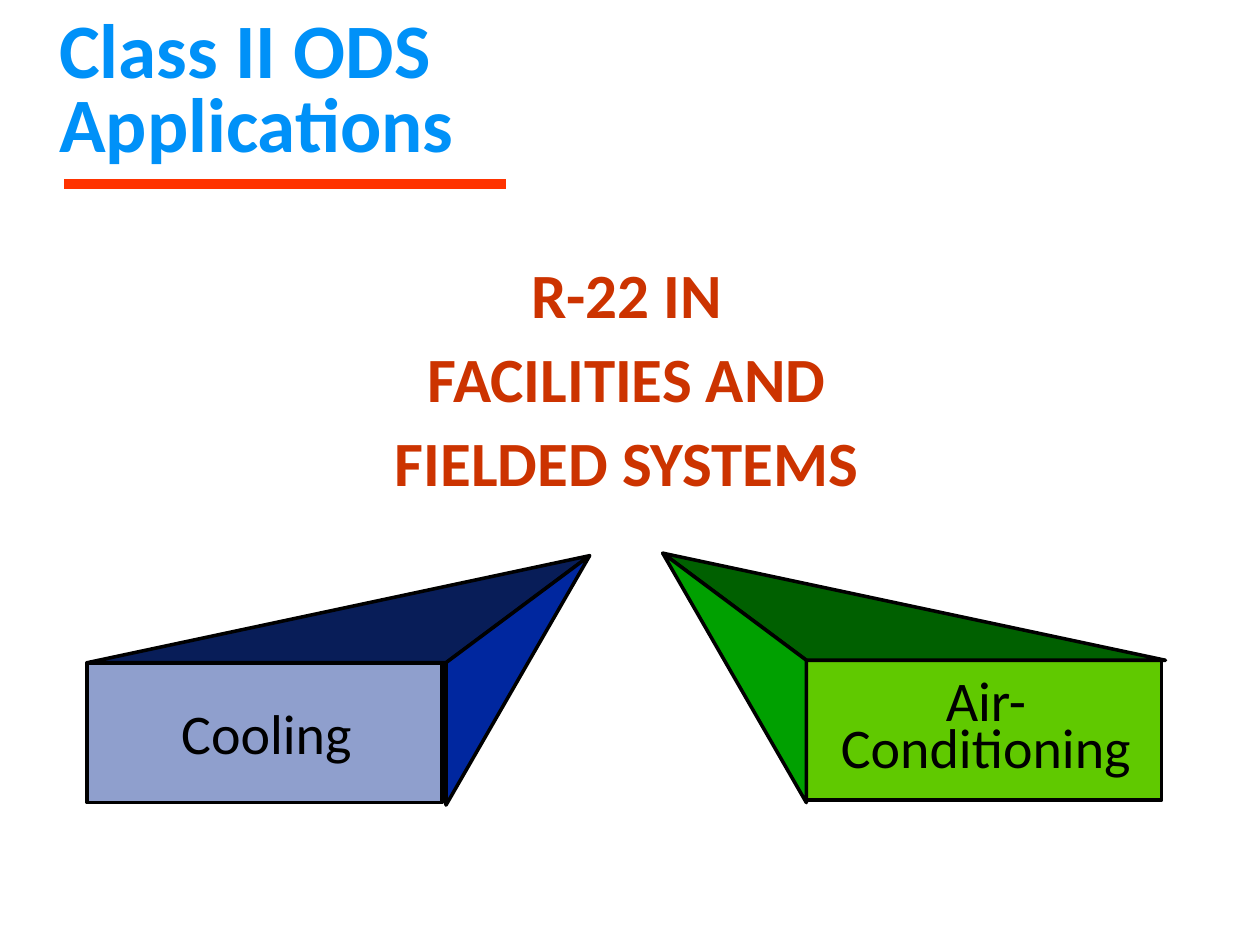
from lxml import etree
from pptx import Presentation
from pptx.dml.color import RGBColor
from pptx.enum.shapes import MSO_CONNECTOR, MSO_SHAPE
from pptx.enum.text import MSO_ANCHOR, MSO_AUTO_SIZE, PP_ALIGN
from pptx.oxml.ns import qn
from pptx.util import Inches, Pt

LEFT, CENTER = PP_ALIGN.LEFT, PP_ALIGN.CENTER
TOP, BOTTOM = MSO_ANCHOR.TOP, MSO_ANCHOR.BOTTOM
NO_FIT, GROW = MSO_AUTO_SIZE.NONE, MSO_AUTO_SIZE.SHAPE_TO_FIT_TEXT
RECTANGLE, STRAIGHT = MSO_SHAPE.RECTANGLE, MSO_CONNECTOR.STRAIGHT
TITLE_ONLY = 5

# Block proportions in inches, measured from the apex
INNER, OUTER, DROP, DEPTH = 1.14, 3.99, 0.85, 1.98
FRONT_WIDTH, FRONT_HEIGHT = 2.82, 1.11
LABEL_WIDTH, LABEL_INSET = 2.75, 0.05


def color(value):
    return RGBColor.from_string(value)


def inches(*values):
    return [Inches(value) for value in values]


def write(box, lines, size, ink, bold=False, align=CENTER, spacing=0.7,
          anchor=TOP, fit=GROW):
    frame = box.text_frame
    frame_format = {"word_wrap": True, "auto_size": fit, "vertical_anchor": anchor}
    for name, value in frame_format.items():
        setattr(frame, name, value)
    frame.text = "\n".join(lines)
    font_format = {"name": "Calibri", "size": Pt(size), "bold": bold}
    for index, para in enumerate(frame.paragraphs):
        para.alignment = align
        para.line_spacing = spacing
        para.space_before = Pt(size / 2 if index else 0)
        for span in para.runs:
            for name, value in font_format.items():
                setattr(span.font, name, value)
            span.font.color.rgb = color(ink)


def paint(shape, fill):
    shape.shadow.inherit = False
    shape.fill.solid()
    shape.fill.fore_color.rgb = color(fill)
    shape.line.color.rgb = color("000000")
    shape.line.width = Pt(2)


def add_face(group, points, fill):
    start, *others = [inches(*point) for point in points]
    outline = group.shapes.build_freeform(*start)
    outline.add_line_segments(others, close=True)
    paint(outline.convert_to_shape(), fill)


def add_block(page, apex, direction, fills, label, label_drop, label_height):
    """Draw a box front whose top and side taper to the apex."""
    x, y = apex
    inner, outer, top = x + direction * INNER, x + direction * OUTER, y + DROP
    left = min(inner, outer)
    front_fill, top_fill, side_fill = fills
    group = page.shapes.add_group_shape()

    front = group.shapes.add_shape(
        RECTANGLE, *inches(left, top, FRONT_WIDTH, FRONT_HEIGHT))
    paint(front, front_fill)
    add_face(group, [(outer, top), apex, (inner, top)], top_fill)
    add_face(group, [(inner, y + DEPTH), (inner, top), apex], side_fill)

    box = group.shapes.add_textbox(
        *inches(left + LABEL_INSET, top + label_drop, LABEL_WIDTH, label_height))
    write(box, [label], 32, "000000")


def add_rule(page, start, end, ink, width):
    rule = page.shapes.add_connector(STRAIGHT, *inches(*start, *end))
    rule.line.color.rgb = color(ink)
    rule.line.width = Pt(width)
    etree.SubElement(rule._element.spPr, qn("a:effectLst"))


def add_title(page):
    title = page.shapes.title
    place = dict(zip(("left", "top", "width", "height"),
                     inches(0.37, 0.17, 8.5, 1.21)))
    for name, value in place.items():
        setattr(title, name, value)
    write(title, ["Class II ODS\vApplications"], 44, "0091F8", bold=True,
          align=LEFT, spacing=0.8, anchor=BOTTOM, fit=NO_FIT)


def main():
    deck = Presentation()
    deck.slide_width, deck.slide_height = inches(10, 7.5)
    page = deck.slides.add_slide(deck.slide_layouts[TITLE_ONLY])

    # Heading and its rule
    add_title(page)
    add_rule(page, (0.51, 1.46), (4.02, 1.46), "FF3300", 6)

    # Central message
    message = page.shapes.add_textbox(*inches(2.16, 2.14, 5.63, 2))
    write(message, ["R-22 IN", "FACILITIES AND", "FIELDED SYSTEMS"],
          36, "CC3300", bold=True)

    # Mirrored application blocks
    add_block(page, (5.26, 4.39), 1, ("60C900", "006000", "00A000"),
              "Air-Conditioning", 0.14, 0.85)
    add_block(page, (4.68, 4.41), -1, ("8F9FCD", "081D58", "00279F"),
              "Cooling", 0.38, 0.49)

    deck.save("out.pptx")


if __name__ == "__main__":
    main()
